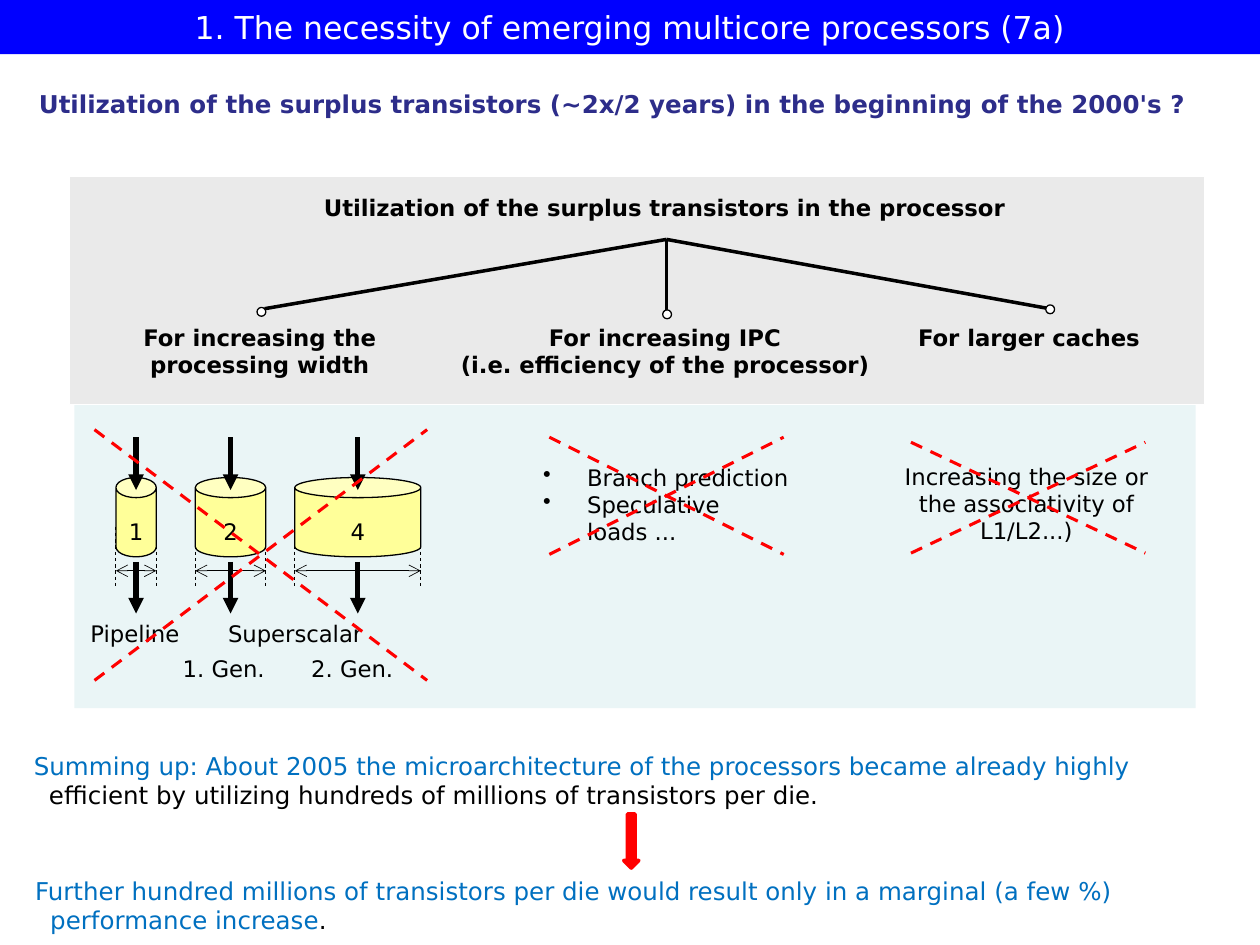
"""Build the slide on how surplus transistors led to multicore processors."""
from dataclasses import dataclass

from lxml.etree import SubElement
from pptx import Presentation
from pptx.dml.color import RGBColor
from pptx.enum.dml import MSO_LINE as Dash
from pptx.enum.shapes import MSO_CONNECTOR as Connector, MSO_SHAPE as Shape
from pptx.enum.text import MSO_ANCHOR as Anchor, MSO_AUTO_SIZE as AutoSize, PP_ALIGN as Align
from pptx.oxml.ns import qn
from pptx.util import Inches, Pt


@dataclass(frozen=True)
class Theme:
    """Colours, font and type sizes."""
    font: str = "DejaVu Sans"
    title: float = 18
    lead: float = 14
    body: float = 13
    black: str = "000000"
    white: str = "FFFFFF"
    banner: str = "0000FF"
    question: str = "2D2D8A"
    summary: str = "0070C0"
    red: str = "FF0000"
    can: str = "FFFF99"
    grey_panel: str = "EAEAEA"
    pale_panel: str = "EAF5F6"


THEME = Theme()


@dataclass(frozen=True)
class Line:
    """One paragraph, with an optional black ending."""
    text: str
    color: str = THEME.black
    indent: float = 0
    bullet: bool = False
    ending: str = ""


@dataclass(frozen=True)
class Label:
    """A text box with its paragraphs."""
    box: tuple[float, float, float, float]
    lines: tuple[Line, ...]
    size: float = THEME.body
    bold: bool = False
    align: Align = Align.LEFT
    inset: tuple[float, float] = (0.05, 0.05)
    wrap: bool = False


@dataclass(frozen=True)
class Stage:
    """A processor generation drawn as a can of a given width."""
    left: float
    width: float
    name: str


@dataclass(frozen=True)
class Branch:
    """A branch of the tree: line end, node corner and heading."""
    tip: tuple[float, float]
    node: tuple[float, float]
    heading_box: tuple[float, float, float, float]
    heading: tuple[str, ...]


CAN_TOP, CAN_HEIGHT, CAN_RIM = 3.79, 0.63, 0.16
ROOT = (5.29, 1.9)
NODE_SIZE = 0.07
WIDE = (0.1, 0.05)

STAGES = (Stage(0.92, 0.32, "1"), Stage(1.55, 0.56, "2"), Stage(2.34, 1, "4"))

BRANCHES = (
    Branch((2.1, 2.45), (2.04, 2.44), (1.13, 2.57, 1.86, 0.44),
           ("For increasing the", "processing width")),
    Branch((5.29, 2.48), (5.26, 2.46), (3.63, 2.57, 3.29, 0.44),
           ("For increasing IPC", "(i.e. efficiency of the processor)")),
    Branch((8.33, 2.45), (8.3, 2.42), (7.28, 2.57, 1.77, 0.22), ("For larger caches",)),
)

CROSSES = ((0.75, 3.41, 3.39, 5.4), (4.36, 3.47, 6.22, 4.4), (7.23, 3.51, 9.09, 4.39))

OPTIONS = (
    Label((1.76, 4.87, 1.18, 0.32), (Line("Superscalar"),)),
    Label((4.26, 3.63, 2.19, 0.76),
          (Line("Branch prediction", indent=0.35, bullet=True),
           Line("Speculative loads ...", indent=0.35, bullet=True)), wrap=True),
    Label((7.07, 3.62, 2.15, 0.76),
          (Line("Increasing the size or"), Line("the associativity of"), Line("L1/L2...)")),
          align=Align.CENTER),
    Label((1.4, 5.15, 0.78, 0.32), (Line("1. Gen."),)),
    Label((2.42, 5.15, 0.78, 0.32), (Line("2. Gen."),)),
    Label((0.55, 4.87, 1.04, 0.32), (Line("Pipeline"),), align=Align.CENTER, inset=WIDE),
)

STATEMENTS = (
    Label((0.21, 0.66, 9.75, 0.34),
          (Line("Utilization of the surplus transistors (~2x/2 years) in the beginning of the 2000's ?",
                THEME.question),), THEME.lead, True, inset=WIDE, wrap=True),
    Label((0.17, 5.91, 9.31, 0.57),
          (Line("Summing up: About 2005 the microarchitecture of the processors became already highly",
                THEME.summary),
           Line("efficient by utilizing hundreds of millions of transistors per die.", indent=0.12)),
          THEME.lead, inset=WIDE, wrap=True),
    Label((0.18, 6.9, 9.82, 0.57),
          (Line("Further hundred millions of transistors per die would result only in a marginal (a few %)",
                THEME.summary),
           Line("performance increase", THEME.summary, 0.12, ending=".")),
          THEME.lead, inset=WIDE, wrap=True),
    Label((1.8, 1.54, 6.94, 0.22), (Line("Utilization of the surplus transistors in the processor"),),
          bold=True, align=Align.CENTER, inset=(0, 0), wrap=True),
)


def add_block(shapes, kind: Shape, box: tuple, fill: str, outline: str | None = None, width: float = 0.75):
    """Draw a filled preset shape."""
    block = shapes.add_shape(kind, *map(Inches, box))
    block.shadow.inherit = False
    block.fill.solid()
    block.fill.fore_color.rgb = RGBColor.from_string(fill)
    if outline:
        block.line.color.rgb = RGBColor.from_string(outline)
        block.line.width = Pt(width)
    else:
        block.line.fill.background()
    return block


def add_line(shapes, start: tuple, end: tuple, width: float, color: str = THEME.black,
             dashed: bool = False, head: str = "", tail: str = "") -> None:
    """Draw a straight line with optional arrowheads."""
    line = shapes.add_connector(Connector.STRAIGHT, *map(Inches, (*start, *end)))
    line.line.color.rgb = RGBColor.from_string(color)
    line.line.width = Pt(width)
    if dashed:
        line.line.dash_style = Dash.DASH
    outline = line.line._get_or_add_ln()
    for tag, arrow in (("a:headEnd", head), ("a:tailEnd", tail)):
        if arrow:
            SubElement(outline, qn(tag), type=arrow)
    SubElement(line._element.spPr, qn("a:effectLst"))


def write_lines(frame, lines: tuple, size: float, bold: bool, align: Align) -> None:
    """Fill a text frame with paragraphs."""
    for index, line in enumerate(lines):
        paragraph = frame.add_paragraph() if index else frame.paragraphs[0]
        paragraph.alignment = align
        font = paragraph.font
        font.name, font.size, font.bold = THEME.font, Pt(size), bold
        font.color.rgb = RGBColor.from_string(line.color)
        paragraph.add_run().text = line.text
        if line.ending:
            ending = paragraph.add_run()
            ending.text = line.ending
            ending.font.color.rgb = RGBColor.from_string(THEME.black)
        properties = paragraph._p.get_or_add_pPr()
        if line.indent:
            properties.set("marL", str(Inches(line.indent)))
        if line.bullet:
            properties.set("indent", str(-Inches(line.indent)))
            bullet = SubElement(properties, qn("a:buChar"), char="•")
            properties.insert(0, bullet)


def add_label(shapes, label: Label) -> None:
    """Draw a text box."""
    frame = shapes.add_textbox(*map(Inches, label.box)).text_frame
    frame.word_wrap = label.wrap
    frame.auto_size = AutoSize.SHAPE_TO_FIT_TEXT
    frame.margin_left = frame.margin_right = Inches(label.inset[0])
    frame.margin_top = frame.margin_bottom = Inches(label.inset[1])
    write_lines(frame, label.lines, label.size, label.bold, label.align)


def add_stage(shapes, stage: Stage) -> None:
    """Draw a can with its flow arrows, width marks and number."""
    right, middle = stage.left + stage.width, stage.left + stage.width / 2
    can = add_block(shapes, Shape.CAN, (stage.left, CAN_TOP, stage.width, CAN_HEIGHT), THEME.can, THEME.black)
    can.adjustments[0] = CAN_RIM / min(stage.width, CAN_HEIGHT)
    for top, bottom in ((3.47, 3.89), (4.46, 4.87)):
        add_line(shapes, (middle, top), (middle, bottom), 3, tail="triangle")
    for edge in (stage.left, right):
        add_line(shapes, (edge, 4.18), (edge, 4.66), 0.5, dashed=True)
    add_line(shapes, (stage.left, 4.53), (right, 4.53), 0.4, head="arrow", tail="arrow")
    add_label(shapes, Label((middle - 0.16, 4.06, 0.32, 0.32), (Line(stage.name),),
                            align=Align.CENTER, inset=WIDE))


def add_branch(shapes, branch: Branch) -> None:
    """Draw a tree branch with its node and heading."""
    add_line(shapes, ROOT, branch.tip, 0)
    add_block(shapes, Shape.OVAL, (*branch.node, NODE_SIZE, NODE_SIZE), THEME.white, THEME.black, 0)
    add_label(shapes, Label(branch.heading_box, tuple(map(Line, branch.heading)),
                            bold=True, align=Align.CENTER, inset=(0, 0)))


def main() -> None:
    """Build and save the slide."""
    deck = Presentation()
    deck.slide_width, deck.slide_height = Inches(10), Inches(7.5)
    shapes = deck.slides.add_slide(deck.slide_layouts[6]).shapes
    add_block(shapes, Shape.RECTANGLE, (0.59, 3.21, 8.9, 2.41), THEME.pale_panel)
    add_block(shapes, Shape.RECTANGLE, (0.55, 1.4, 9.01, 1.81), THEME.grey_panel, THEME.white)
    for stage in STAGES:
        add_stage(shapes, stage)
    for label in OPTIONS + STATEMENTS:
        add_label(shapes, label)
    for left, top, right, bottom in CROSSES:
        add_line(shapes, (left, top), (right, bottom), 1.75, THEME.red, dashed=True)
        add_line(shapes, (left, bottom), (right, top), 1.75, THEME.red, dashed=True)
    for branch in BRANCHES:
        add_branch(shapes, branch)
    add_block(shapes, Shape.DOWN_ARROW, (4.95, 6.46, 0.12, 0.43), THEME.red, THEME.red, 2)
    banner = add_block(shapes, Shape.RECTANGLE, (0, 0, 10, 0.43), THEME.banner).text_frame
    banner.vertical_anchor = Anchor.MIDDLE
    write_lines(banner, (Line("1. The necessity of emerging multicore processors (7a)", THEME.white),),
                THEME.title, False, Align.CENTER)
    deck.save("out.pptx")


if __name__ == "__main__":
    main()
